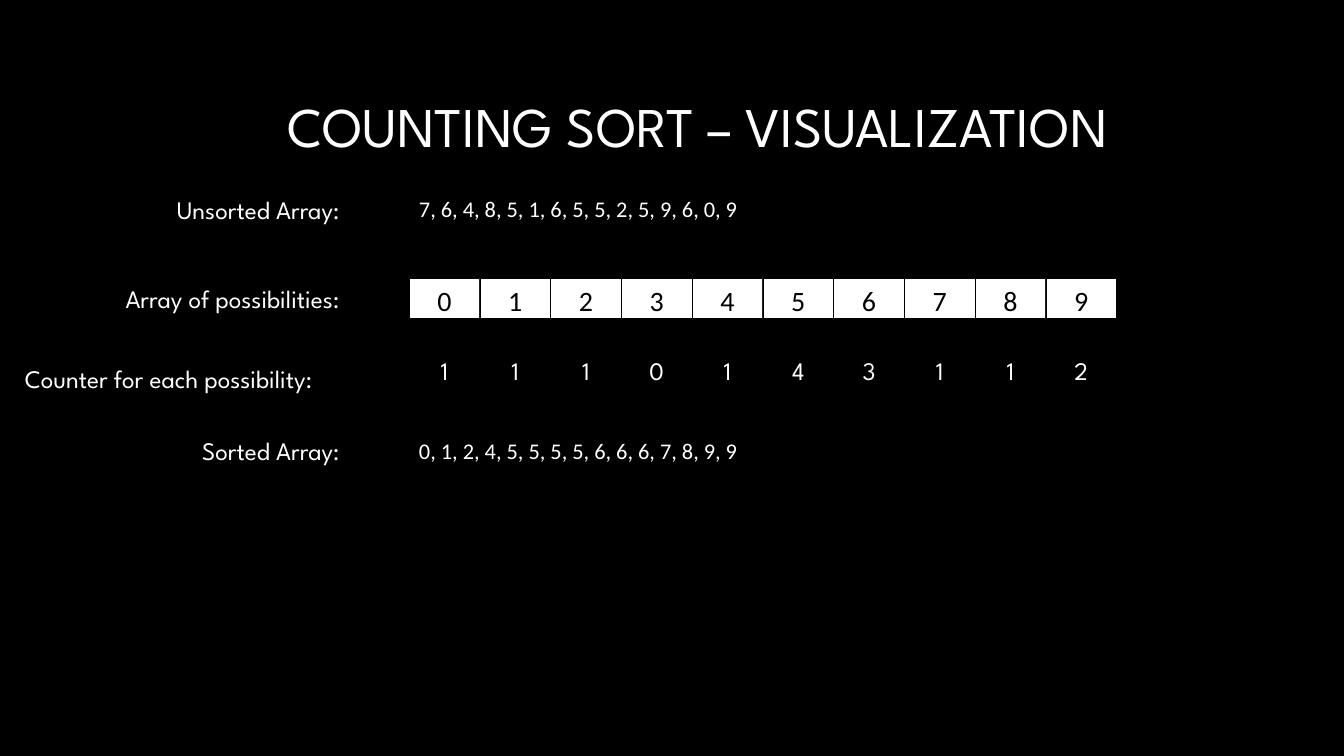
from pptx import Presentation
from pptx.dml.color import RGBColor
from pptx.enum.shapes import MSO_SHAPE
from pptx.enum.text import MSO_ANCHOR, MSO_AUTO_SIZE, PP_ALIGN
from pptx.util import Cm, Pt

BLACK = RGBColor(0x00, 0x00, 0x00)
WHITE = RGBColor(0xFF, 0xFF, 0xFF)
HEADING_FONT = "League Spartan"
NUMBER_FONT = "Calibri"

UNSORTED = [7, 6, 4, 8, 5, 1, 6, 5, 5, 2, 5, 9, 6, 0, 9]
POSSIBILITIES = range(10)

LABEL_LEFT, LABEL_WIDTH = 0.38, 9.04
ARRAY_LEFT, ARRAY_WIDTH = 10.31, 17.83
ROW_HEIGHT = 1.02


def write(frame, text, font, size, color, align):
    paragraph = frame.paragraphs[0]
    paragraph.alignment = align
    run = paragraph.add_run()
    run.text = text
    run.font.name = font
    run.font.size = Pt(size)
    run.font.color.rgb = color


def add_text(slide, box, text, font, size, align, right_inset=0.25):
    frame = slide.shapes.add_textbox(*map(Cm, box)).text_frame
    frame.word_wrap = True
    frame.margin_right = Cm(right_inset)
    write(frame, text, font, size, WHITE, align)


def add_title(slide, box, text):
    title = slide.shapes.title
    title.left, title.top, title.width, title.height = map(Cm, box)
    frame = title.text_frame
    frame.auto_size = MSO_AUTO_SIZE.NONE
    frame.vertical_anchor = MSO_ANCHOR.MIDDLE
    write(frame, text, HEADING_FONT, 40, WHITE, PP_ALIGN.RIGHT)
    frame.paragraphs[0].line_spacing = 0.9


def add_label(slide, top, text, align=PP_ALIGN.RIGHT):
    box = (LABEL_LEFT, top, LABEL_WIDTH, ROW_HEIGHT)
    add_text(slide, box, text, HEADING_FONT, 18, align, right_inset=0.86)


def add_number_list(slide, top, numbers):
    box = (ARRAY_LEFT, top, 8.81, ROW_HEIGHT)
    add_text(slide, box, ", ".join(map(str, numbers)), NUMBER_FONT, 16, PP_ALIGN.LEFT)


def split_row(box, count):
    """Return the boxes of equal columns that fill the given box."""
    left, top, width, height = box
    column = width / count
    return [(left + i * column, top, column, height) for i in range(count)]


def add_possibility_cells(slide, box):
    for cell_box, number in zip(split_row(box, len(POSSIBILITIES)), POSSIBILITIES):
        cell = slide.shapes.add_shape(MSO_SHAPE.RECTANGLE, *map(Cm, cell_box))
        cell.shadow.inherit = False
        cell.fill.solid()
        cell.fill.fore_color.rgb = WHITE
        cell.line.color.rgb = BLACK
        cell.line.width = Pt(0.5)
        cell.text_frame.vertical_anchor = MSO_ANCHOR.TOP
        write(cell.text_frame, str(number), NUMBER_FONT, 20, BLACK, PP_ALIGN.CENTER)


def add_counters(slide, box):
    for counter_box, number in zip(split_row(box, len(POSSIBILITIES)), POSSIBILITIES):
        count = str(UNSORTED.count(number))
        add_text(slide, counter_box, count, HEADING_FONT, 18, PP_ALIGN.CENTER)


def main():
    deck = Presentation()
    deck.slide_width, deck.slide_height = Cm(33.87), Cm(19.05)
    slide = deck.slides.add_slide(deck.slide_layouts[5])
    slide.background.fill.solid()
    slide.background.fill.fore_color.rgb = BLACK

    add_title(slide, (4.24, 1.47, 23.93, 3.58), "COUNTING SORT – VISUALIZATION")
    add_label(slide, 4.78, "Unsorted Array:")
    add_number_list(slide, 4.8, UNSORTED)
    add_label(slide, 7.01, "Array of possibilities:")
    add_possibility_cells(slide, (ARRAY_LEFT, 7.01, ARRAY_WIDTH, ROW_HEIGHT))
    add_label(slide, 9.02, "Counter for each possibility:", PP_ALIGN.LEFT)
    add_counters(slide, (ARRAY_LEFT, 8.84, ARRAY_WIDTH, ROW_HEIGHT))
    add_label(slide, 10.85, "Sorted Array:")
    add_number_list(slide, 10.9, sorted(UNSORTED))
    deck.save("out.pptx")


if __name__ == "__main__":
    main()
